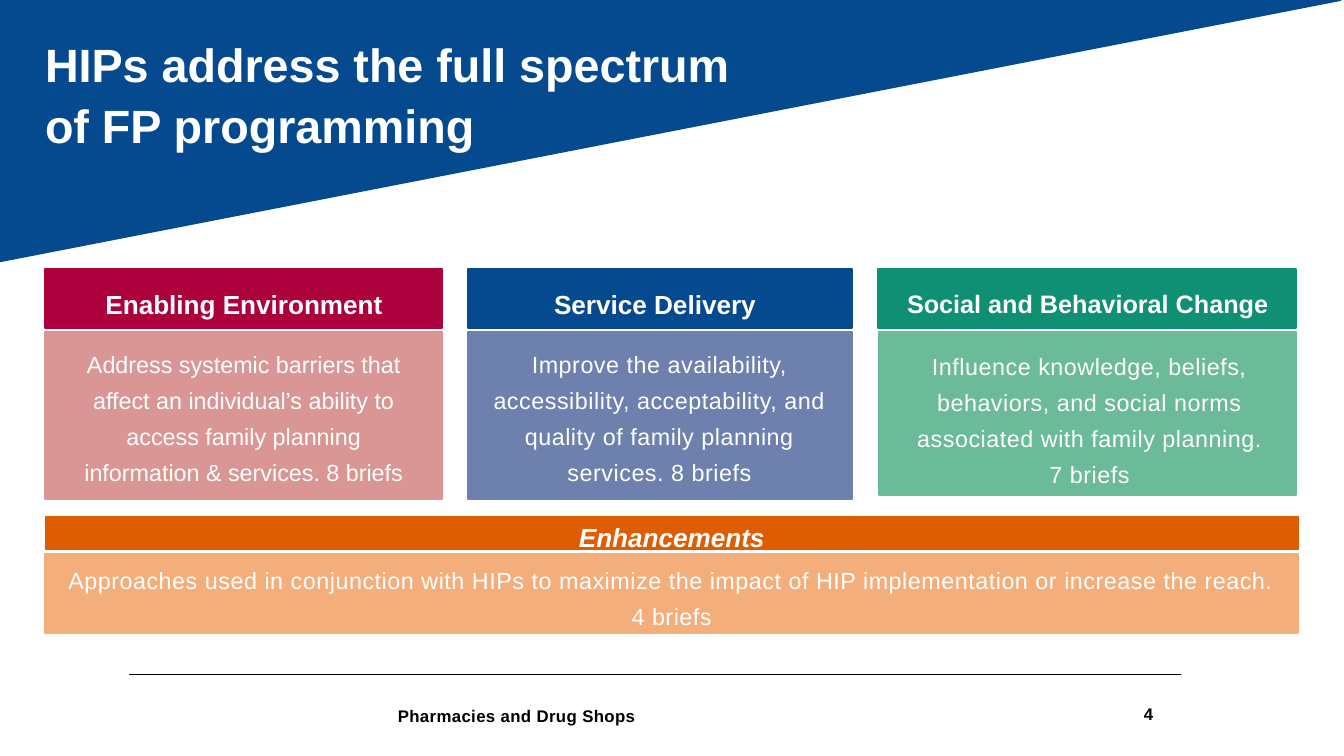
from pptx import Presentation
from pptx.dml.color import RGBColor
from pptx.enum.shapes import MSO_CONNECTOR, MSO_SHAPE
from pptx.enum.text import MSO_ANCHOR, MSO_AUTO_SIZE, PP_ALIGN
from pptx.util import Pt
from lxml import etree

RECT = MSO_SHAPE.RECTANGLE
LEFT, CENTER, RIGHT = PP_ALIGN.LEFT, PP_ALIGN.CENTER, PP_ALIGN.RIGHT
TOP, MIDDLE = MSO_ANCHOR.TOP, MSO_ANCHOR.MIDDLE
PX = 9144  # 100 px to the inch
DRAWING = "http://schemas.openxmlformats.org/drawingml/2006/main"
FONT = "Arial"

COLORS = {
    "white": "FFFFFF", "black": "000000",
    "blue": "054A8E", "pale blue": "6E81AE",
    "red": "AD013E", "pale red": "D99694",
    "green": "0F8F73", "pale green": "6BBB99",
    "orange": "DD5D00", "pale orange": "F3AE7B",
}

# Content: each place is left, top, width, height in px
TITLE = "HIPs address the full spectrum of FP programming"
CATEGORIES = [
    {"name": "Enabling Environment", "color": "red", "size": 28, "spacing": 0,
     "text": ["Address systemic barriers that affect an individual’s ability to "
              "access family planning information & services. 8 briefs"],
     "head": (67, 401, 591, 87), "body": (67, 494, 591, 248),
     "label": (118, 422, 490, 49), "copy": (115, 510, 495, 209)},
    {"name": "Service Delivery", "color": "blue", "size": 28, "spacing": 0.6,
     "text": ["Improve the availability, accessibility, acceptability, and "
              "quality of family planning services. 8 briefs"],
     "head": (696, 401, 572, 87), "body": (696, 494, 572, 248),
     "label": (751, 422, 447, 49), "copy": (734, 510, 495, 209)},
    {"name": "Social and Behavioral Change", "color": "green", "size": 27, "spacing": 0.6,
     "text": ["Influence knowledge, beliefs, behaviors, and social norms "
              "associated with family planning.", "7 briefs"],
     "head": (1307, 401, 622, 87), "body": (1308, 494, 621, 243),
     "label": (1349, 421, 539, 49), "copy": (1308, 512, 627, 208)},
]
ENHANCEMENTS = "Enhancements"
ENHANCEMENTS_TEXT = ("Approaches used in conjunction with HIPs to maximize the impact of "
                     "HIP implementation or increase the reach. 4 briefs")
FOOTER = "Pharmacies and Drug Shops"
PAGE_NUMBER = "4"


def emu(place):
    return [value * PX for value in place]


def rgb(name):
    return RGBColor.from_string(COLORS[name])


def paint(shape, color, width):
    shape.shadow.inherit = False
    shape.fill.solid()
    shape.fill.fore_color.rgb = rgb(color)
    shape.line.color.rgb = rgb(color)
    shape.line.width = Pt(width)


def add_rect(page, place, color, width=2):
    box = page.shapes.add_shape(RECT, *emu(place))
    paint(box, color, width)
    return box


def write(box, lines, size, leading=38.5, align=CENTER, color="white", bold=False,
          italic=False, spacing=0, inset=(0, 0), anchor=TOP):
    frame = box.text_frame
    frame.word_wrap = True
    frame.auto_size = MSO_AUTO_SIZE.NONE
    frame.vertical_anchor = anchor
    frame.margin_left = frame.margin_right = inset[0] * PX
    frame.margin_top = frame.margin_bottom = inset[1] * PX
    for index, line in enumerate(lines):
        para = frame.add_paragraph() if index else frame.paragraphs[0]
        para.alignment = align
        para.space_before = Pt(0)
        if leading:
            para.line_spacing = Pt(leading)
        span = para.add_run()
        span.text = line
        font = span.font
        font.name, font.size = FONT, Pt(size)
        font.bold, font.italic = bold, italic
        font.color.rgb = rgb(color)
        if spacing:
            font._element.set("spc", str(round(spacing * 100)))


def add_text(page, place, lines, size, **style):
    write(page.shapes.add_textbox(*emu(place)), lines, size, **style)


def main():
    deck = Presentation()
    deck.slide_width, deck.slide_height = emu((2000, 1125))
    page = deck.slides.add_slide(deck.slide_layouts[5])

    # Footer and its rule
    add_text(page, (592, 1045, 1070, 33), [FOOTER], 18, leading=25.2,
             align=LEFT, color="black", bold=True, spacing=0.4)
    rule = page.shapes.add_connector(MSO_CONNECTOR.STRAIGHT, *emu((192, 1004, 1758, 1004)))
    rule.line.color.rgb = rgb("black")
    rule.line.width = Pt(0.75)
    etree.SubElement(rule._element.spPr, f"{{{DRAWING}}}effectLst")

    # Slanted banner behind the title
    outline = page.shapes.build_freeform(-1, 0, scale=PX)
    outline.add_line_segments([(-1, 389), (1995, 0)], close=True)
    paint(outline.convert_to_shape(), "blue", 2)

    # Three categories
    for category in CATEGORIES:
        color = category["color"]
        add_rect(page, category["body"], "pale " + color)
        add_rect(page, category["head"], color)
        add_text(page, category["label"], [category["name"]], category["size"], bold=True)
        add_text(page, category["copy"], category["text"], 25, spacing=category["spacing"])

    # Enhancements band
    add_rect(page, (67, 824, 1865, 118), "pale orange")
    band = add_rect(page, (67, 769, 1865, 49), "orange", 0.75)
    write(band, [ENHANCEMENTS], 28, bold=True, italic=True)
    note = add_rect(page, (90, 841, 1819, 86), "pale orange")
    write(note, [ENHANCEMENTS_TEXT], 25, spacing=0.6, inset=(10, 5), anchor=MIDDLE)

    # Title, brought in front of the banner
    title = page.shapes.title
    title.left, title.top, title.width, title.height = emu((67, 47, 1058, 182))
    write(title, [TITLE], 50, leading=65, align=LEFT, bold=True)
    page.shapes._spTree.append(title._element)

    # Page number
    add_text(page, (1493, 1042, 233, 40), [PAGE_NUMBER], 18, leading=None, align=RIGHT,
             color="black", bold=True, inset=(10, 5), anchor=MIDDLE)

    deck.save("out.pptx")


if __name__ == "__main__":
    main()
